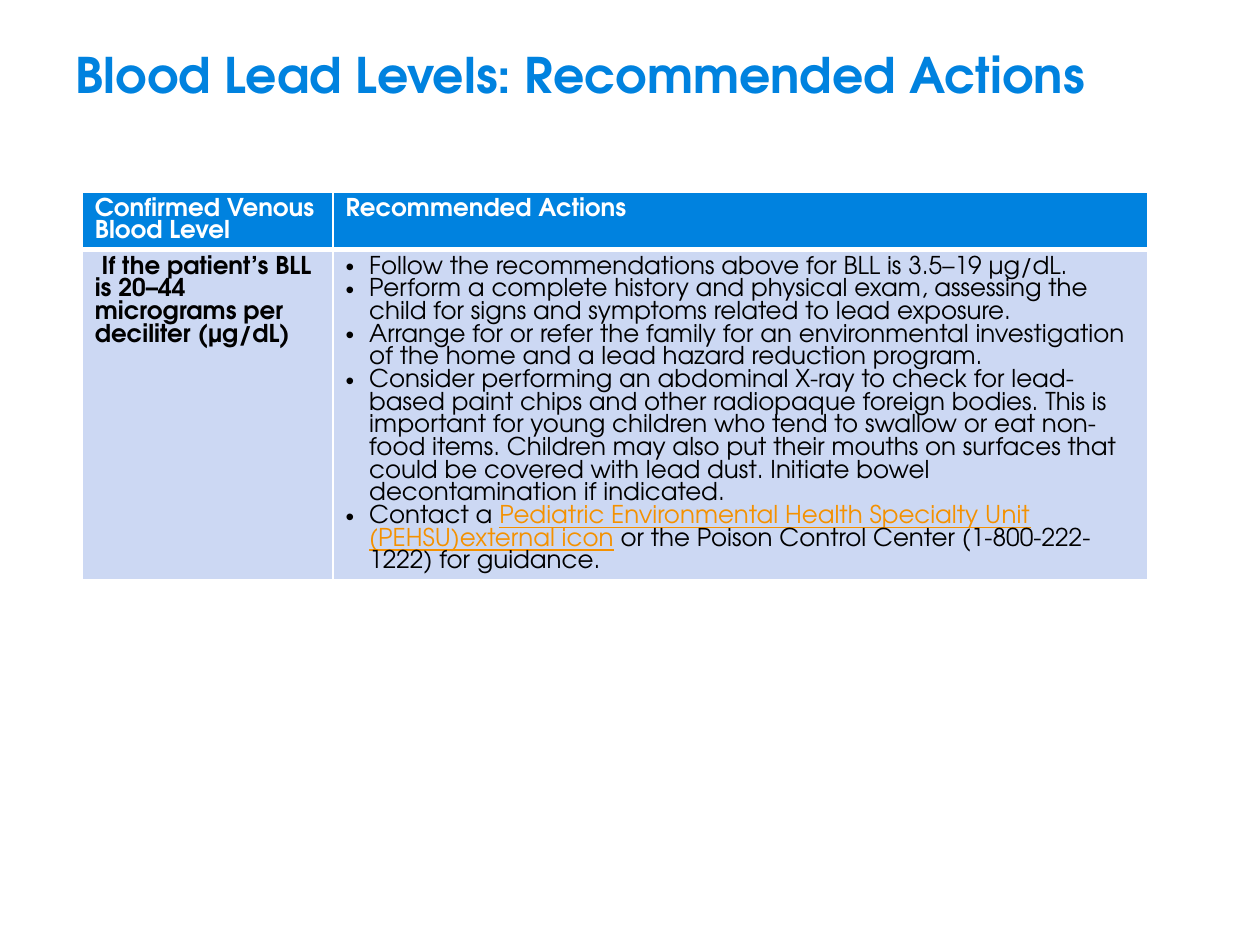
from lxml import etree
from pptx import Presentation
from pptx import util as u
from pptx.dml.color import RGBColor
from pptx.enum import text
from pptx.oxml.ns import qn

TITLE = "Blood Lead Levels: Recommended Actions"
HEADERS = ["Confirmed Venous Blood Level", "Recommended Actions"]
LEVEL = " If the patient’s BLL is 20–44 micrograms per deciliter (μg/dL)"
ACTIONS = [
    [("Follow the recommendations above for BLL is 3.5–19 μg/dL.", "black")],
    [("Perform a complete history and physical exam, assessing the child for "
      "signs and symptoms related to lead exposure.", "black")],
    [("Arrange for or refer the family for an environmental investigation of "
      "the home and a lead hazard reduction program.", "black")],
    [("Consider performing an abdominal X-ray to check for lead-based paint "
      "chips and other radiopaque foreign bodies. This is important for young "
      "children who tend to swallow or eat non-food items. Children may also "
      "put their mouths on surfaces that could be covered with lead dust. "
      "Initiate bowel decontamination if indicated.", "black")],
    [("Contact a ", "black"),
     ("Pediatric Environmental Health Specialty Unit (PEHSU)external icon", "orange"),
     (" or the Poison Control Center (1-800-222-1222) for guidance.", "black")],
]
COLORS = {"blue": "0082DF", "pale": "CCD8F3", "white": "FFFFFF",
          "black": "000000", "orange": "F49100"}
FONT = "TeX Gyre Adventor"
COLUMNS = [143.3, 465.8]
ROW_HEIGHT = 29.5
INDENT = 13.5


def color(name):
    return RGBColor.from_string(COLORS[name])


def style(para, size, name, bold):
    para.font.name = FONT
    para.font.size = u.Pt(size)
    para.font.bold = bold
    para.font.color.rgb = color(name)


def add_bullet(para):
    properties = para._p.get_or_add_pPr()
    properties.set("marL", str(u.Pt(INDENT)))
    properties.set("indent", str(-u.Pt(INDENT)))
    etree.SubElement(properties, qn("a:buFont"), typeface="Arial")
    etree.SubElement(properties, qn("a:buChar"), char="•")


def format_cell(cell, fill, bottom):
    cell.fill.solid()
    cell.fill.fore_color.rgb = color(fill)
    properties = cell._tc.get_or_add_tcPr()
    for index, (side, width) in enumerate(zip("LRTB", (1, 1, 1, bottom))):
        line = etree.Element(qn("a:ln" + side), w=str(u.Pt(width)))
        solid = etree.SubElement(line, qn("a:solidFill"))
        etree.SubElement(solid, qn("a:srgbClr"), val=COLORS["white"])
        properties.insert(index, line)


def add_title(page):
    title = page.shapes.title
    title.left, title.top, title.width, title.height = map(u.Pt, (36, 18.7, 648, 46.8))
    title.text_frame.text = TITLE
    title.text_frame.vertical_anchor = text.MSO_ANCHOR.MIDDLE
    para = title.text_frame.paragraphs[0]
    para.alignment = text.PP_ALIGN.LEFT
    style(para, 28, "blue", True)


def add_actions(frame):
    for number, action in enumerate(ACTIONS):
        para = frame.add_paragraph() if number else frame.paragraphs[0]
        add_bullet(para)
        style(para, 14, "black", False)
        for words, name in action:
            span = para.add_run()
            span.text = words
            if name != "black":
                span.font.color.rgb = color(name)
                span.font.underline = True


def add_table(page):
    table = page.shapes.add_table(2, 2, u.Pt(47), u.Pt(109.6), u.Pt(sum(COLUMNS)),
                                  u.Pt(2 * ROW_HEIGHT)).table
    for column, width in zip(table.columns, COLUMNS):
        column.width = u.Pt(width)
    for column, header in enumerate(HEADERS):
        cell = table.cell(0, column)
        cell.text = header
        style(cell.text_frame.paragraphs[0], 14, "white", True)
        format_cell(cell, "blue", 3)
        format_cell(table.cell(1, column), "pale", 1)
    level = table.cell(1, 0)
    level.text = LEVEL
    style(level.text_frame.paragraphs[0], 14, "black", True)
    add_actions(table.cell(1, 1).text_frame)


def main():
    deck = Presentation()
    deck.slide_width, deck.slide_height = u.Pt(720), u.Pt(540)
    page = deck.slides.add_slide(deck.slide_layouts[5])
    add_title(page)
    add_table(page)
    deck.save("out.pptx")


if __name__ == "__main__":
    main()
